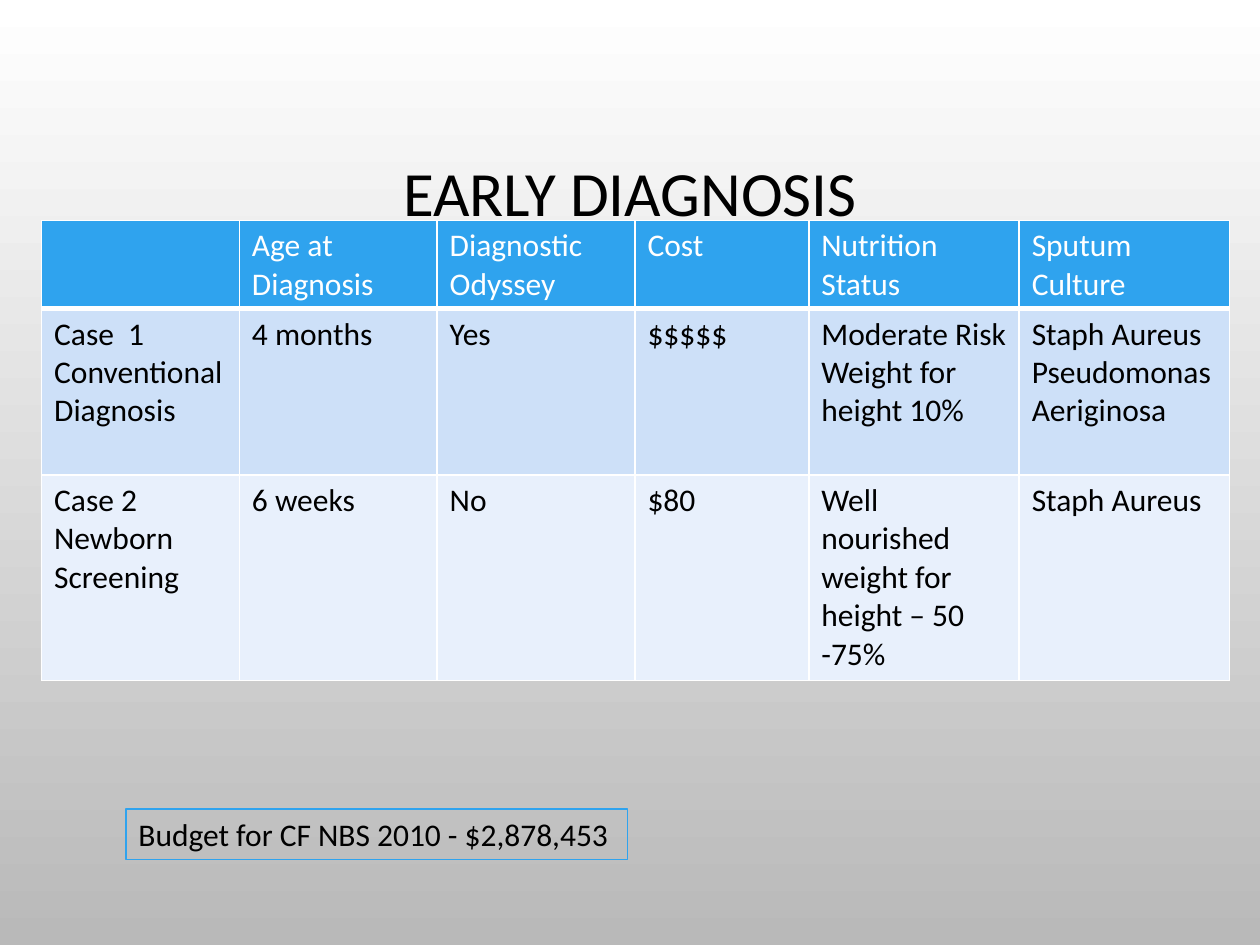
from dataclasses import dataclass

from lxml.etree import SubElement
from pptx import Presentation
from pptx.dml.color import RGBColor
from pptx.enum.text import MSO_ANCHOR, MSO_AUTO_SIZE, PP_ALIGN
from pptx.oxml.ns import qn
from pptx.util import Inches, Pt

TITLE = "EARLY DIAGNOSIS"
BUDGET = "Budget for CF NBS 2010 - $2,878,453"
CASES = [
    ["", "Age at Diagnosis", "Diagnostic Odyssey", "Cost", "Nutrition Status", "Sputum Culture"],
    ["Case  1\nConventional Diagnosis", "4 months", "Yes", "$$$$$",
     "Moderate Risk\nWeight for height 10%", "Staph Aureus\nPseudomonas\nAeriginosa"],
    ["Case 2\nNewborn Screening", "6 weeks", "No", "$80",
     "Well nourished weight for height – 50 -75%", "Staph Aureus"],
]
COLUMN_WIDTHS = [1.57, 1.57, 1.57, 1.38, 1.67, 1.67]
ROW_HEIGHTS = [0.7, 1.32, 1.63]


@dataclass(frozen=True)
class Theme:
    font: str = "Calibri"
    title_size: int = 36
    body_size: int = 18
    text: str = "000000"
    light: str = "FFFFFF"
    accent: str = "2FA3EE"
    shade: str = "B9B9B9"
    row_fills: tuple = ("2FA3EE", "CDE0F8", "E8F0FC")


THEME = Theme()


def color(value):
    return RGBColor.from_string(value)


def write(frame, text, size, ink):
    frame.text = text
    for para in frame.paragraphs:
        para.font.name = THEME.font
        para.font.size = Pt(size)
        para.font.bold = False
        para.font.color.rgb = color(ink)


def add_border(cell, side, points):
    properties = cell._tc.get_or_add_tcPr()
    line = SubElement(properties, qn(f"a:ln{side}"), w=str(Pt(points)))
    fill = SubElement(line, qn("a:solidFill"))
    SubElement(fill, qn("a:srgbClr"), val=THEME.light)


def set_background(page):
    fill = page.background.fill
    fill.gradient()
    fill.gradient_angle = 270
    for stop, value in zip(fill.gradient_stops, (THEME.light, THEME.shade)):
        stop.color.rgb = color(value)


def add_title(page):
    box = page.shapes.add_textbox(Inches(0.75), Inches(0.68), Inches(8.5), Inches(1.75))
    frame = box.text_frame
    frame.word_wrap = True
    frame.vertical_anchor = MSO_ANCHOR.MIDDLE
    write(frame, TITLE, THEME.title_size, THEME.text)
    frame.paragraphs[0].alignment = PP_ALIGN.CENTER
    frame.paragraphs[0].line_spacing = 0.9


def add_cases(page):
    table = page.shapes.add_table(
        len(CASES), len(COLUMN_WIDTHS), Inches(0.33), Inches(1.75),
        Inches(sum(COLUMN_WIDTHS)), Inches(sum(ROW_HEIGHTS))).table
    for column, width in zip(table.columns, COLUMN_WIDTHS):
        column.width = Inches(width)
    for index, (row, height, texts) in enumerate(zip(table.rows, ROW_HEIGHTS, CASES)):
        row.height = Inches(height)
        header = index == 0
        borders = {"L": 1, "R": 1, "T": 1, "B": 3} if header else {"L": 1, "R": 1, "B": 1}
        for cell, text in zip(row.cells, texts):
            for side, points in borders.items():
                add_border(cell, side, points)
            cell.fill.solid()
            cell.fill.fore_color.rgb = color(THEME.row_fills[index])
            write(cell.text_frame, text, THEME.body_size, THEME.light if header else THEME.text)


def add_budget(page):
    box = page.shapes.add_textbox(Inches(1), Inches(6.42), Inches(3.98), Inches(0.4))
    box.line.color.rgb = color(THEME.accent)
    box.line.width = Pt(0.75)
    box.text_frame.word_wrap = False
    box.text_frame.auto_size = MSO_AUTO_SIZE.SHAPE_TO_FIT_TEXT
    write(box.text_frame, BUDGET, THEME.body_size, THEME.text)


def main():
    """Build the early diagnosis slide."""
    deck = Presentation()
    deck.slide_width, deck.slide_height = Inches(10), Inches(7.5)
    page = deck.slides.add_slide(deck.slide_layouts[6])
    set_background(page)
    add_title(page)
    add_cases(page)
    add_budget(page)
    deck.save("out.pptx")


if __name__ == "__main__":
    main()
